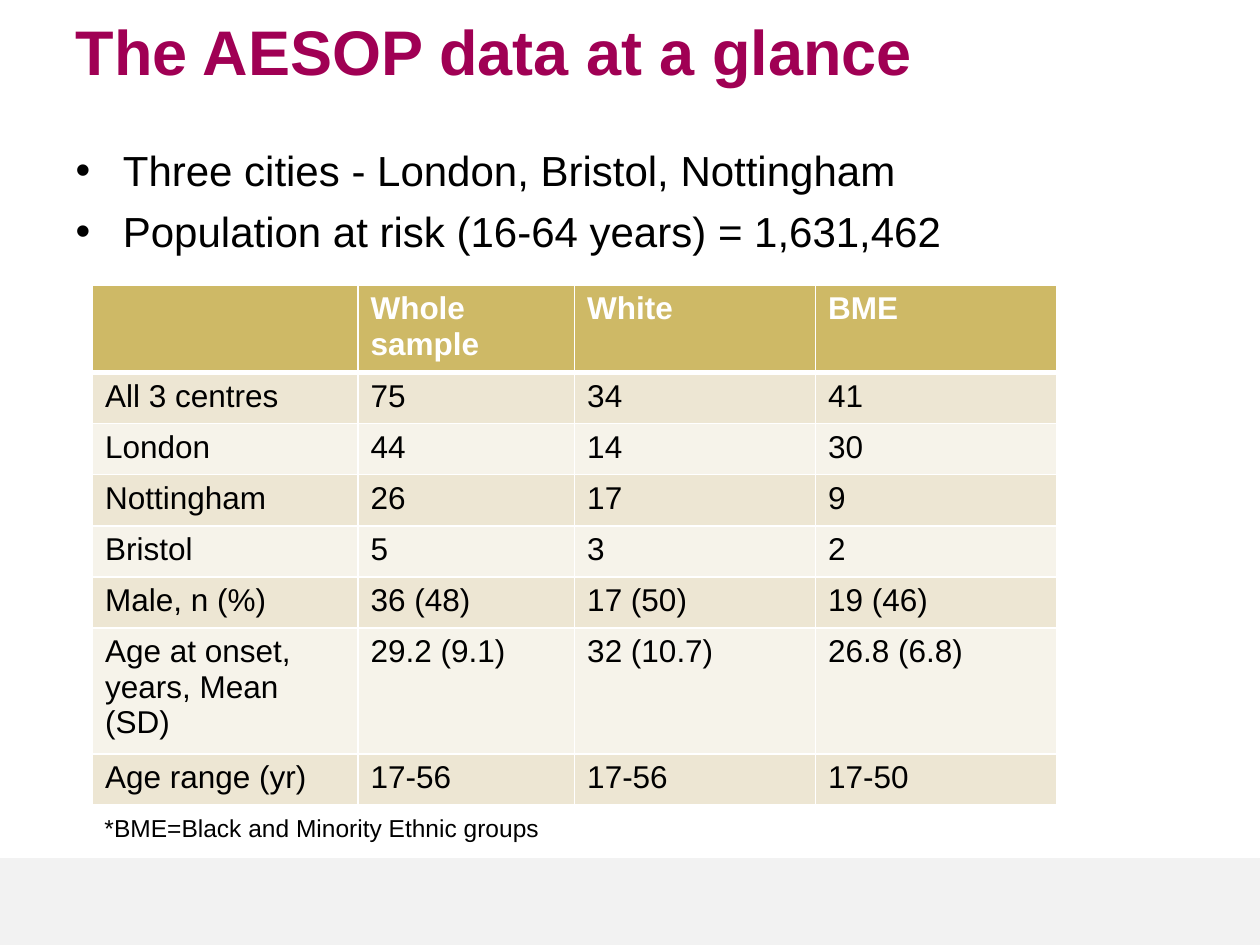
from lxml import etree
from pptx import Presentation
from pptx.dml.color import RGBColor
from pptx.enum.shapes import MSO_SHAPE
from pptx.enum.text import MSO_ANCHOR, MSO_AUTO_SIZE, PP_ALIGN
from pptx.oxml import parse_xml
from pptx.oxml.ns import nsdecls, qn
from pptx.util import Pt

RECTANGLE = MSO_SHAPE.RECTANGLE
TOP, MIDDLE = MSO_ANCHOR.TOP, MSO_ANCHOR.MIDDLE
NO_FIT = MSO_AUTO_SIZE.NONE
LEFT = PP_ALIGN.LEFT

COLORS = {
    "title": "A00054", "text": "000000", "white": "FFFFFF", "band": "F2F2F2",
    "header": "CEB966", "odd_row": "EDE6D3", "even_row": "F6F3EA",
}
TITLE = {"size": Pt(36), "bold": True, "color": "title"}
BULLET = {"size": Pt(24), "bold": False, "color": "text"}
HEADER = {"size": Pt(18), "bold": True, "color": "white"}
CELL = {"size": Pt(18), "bold": False, "color": "text"}
NOTE = {"size": Pt(14), "bold": False, "color": "text"}


def write(para, text, style):
    para.alignment = LEFT
    span = para.add_run()
    span.text = text
    span.font.name = "Arial"
    for name, value in style.items():
        if name == "color":
            span.font.color.rgb = RGBColor.from_string(COLORS[value])
        else:
            setattr(span.font, name, value)


def add_border(cell, side, width):
    line = parse_xml(
        f'<a:{side} {nsdecls("a")} w="{Pt(width)}"><a:solidFill>'
        f'<a:srgbClr val="{COLORS["white"]}"/></a:solidFill></a:{side}>')
    cell._tc.get_or_add_tcPr().append(line)


deck = Presentation()
deck.slide_width, deck.slide_height = Pt(720), Pt(540)
page = deck.slides.add_slide(deck.slide_layouts[1])

# Footer band, behind everything else
band = page.shapes.add_shape(RECTANGLE, Pt(0), Pt(490.3), Pt(720), Pt(49.7))
band.shadow.inherit = False
band.fill.solid()
band.fill.fore_color.rgb = RGBColor.from_string(COLORS["band"])
band.line.fill.background()
band.element.getparent().insert(2, band.element)

# Title and bullets
title, body = page.shapes.title, page.placeholders[1]
for box, top, height, anchor in ((title, 0, 57, MIDDLE), (body, 79.2, 422, TOP)):
    box.left, box.top, box.width, box.height = Pt(36), Pt(top), Pt(648), Pt(height)
    box.text_frame.auto_size = NO_FIT
    box.text_frame.vertical_anchor = anchor
    box.text_frame.word_wrap = True
write(title.text_frame.paragraphs[0], "The AESOP data at a glance", TITLE)

bullets = [
    "Three cities - London, Bristol, Nottingham",
    "Population at risk (16-64 years) = 1,631,462",
]
for index, text in enumerate(bullets):
    para = body.text_frame.add_paragraph() if index else body.text_frame.paragraphs[0]
    para.space_before = Pt(6 if index else 0)
    properties = para._p.get_or_add_pPr()
    properties.set("marL", str(Pt(27)))
    properties.set("indent", str(Pt(-27)))
    etree.SubElement(properties, qn("a:buFont")).set("typeface", "Arial")
    etree.SubElement(properties, qn("a:buChar")).set("char", "•")
    write(para, text, BULLET)

# Sample table
rows = [
    ["", "Whole sample", "White", "BME"],
    ["All 3 centres", "75", "34", "41"],
    ["London", "44", "14", "30"],
    ["Nottingham", "26", "17", "9"],
    ["Bristol", "5", "3", "2"],
    ["Male, n (%)", "36 (48)", "17 (50)", "19 (46)"],
    ["Age at onset, years, Mean (SD)", "29.2 (9.1)", "32 (10.7)", "26.8 (6.8)"],
    ["Age range (yr)", "17-56", "17-56", "17-50"],
]
widths = [151.7, 123.8, 137.7, 137.7]
heights = [50] + [29.2] * 5 + [72, 29.2]
table = page.shapes.add_table(
    len(rows), len(widths), Pt(52.9), Pt(162.9), Pt(sum(widths)), Pt(sum(heights))).table
table.first_row = table.horz_banding = False
for column, width in zip(table.columns, widths):
    column.width = Pt(width)
for row, height in zip(table.rows, heights):
    row.height = Pt(height)

for r, values in enumerate(rows):
    fill = "header" if r == 0 else "odd_row" if r % 2 else "even_row"
    borders = {"lnL": 1, "lnR": 1, "lnT": 3 if r == 1 else 1, "lnB": 3 if r == 0 else 1}
    for c, text in enumerate(values):
        cell = table.cell(r, c)
        for side, width in borders.items():
            add_border(cell, side, width)
        cell.fill.solid()
        cell.fill.fore_color.rgb = RGBColor.from_string(COLORS[fill])
        if text:
            write(cell.text_frame.paragraphs[0], text, CELL if r else HEADER)

# Footnote
note = page.shapes.add_textbox(Pt(52.6), Pt(460.8), Pt(510.5), Pt(24.2))
note.text_frame.word_wrap = True
write(note.text_frame.paragraphs[0], "*BME=Black and Minority Ethnic groups", NOTE)

deck.save("out.pptx")
